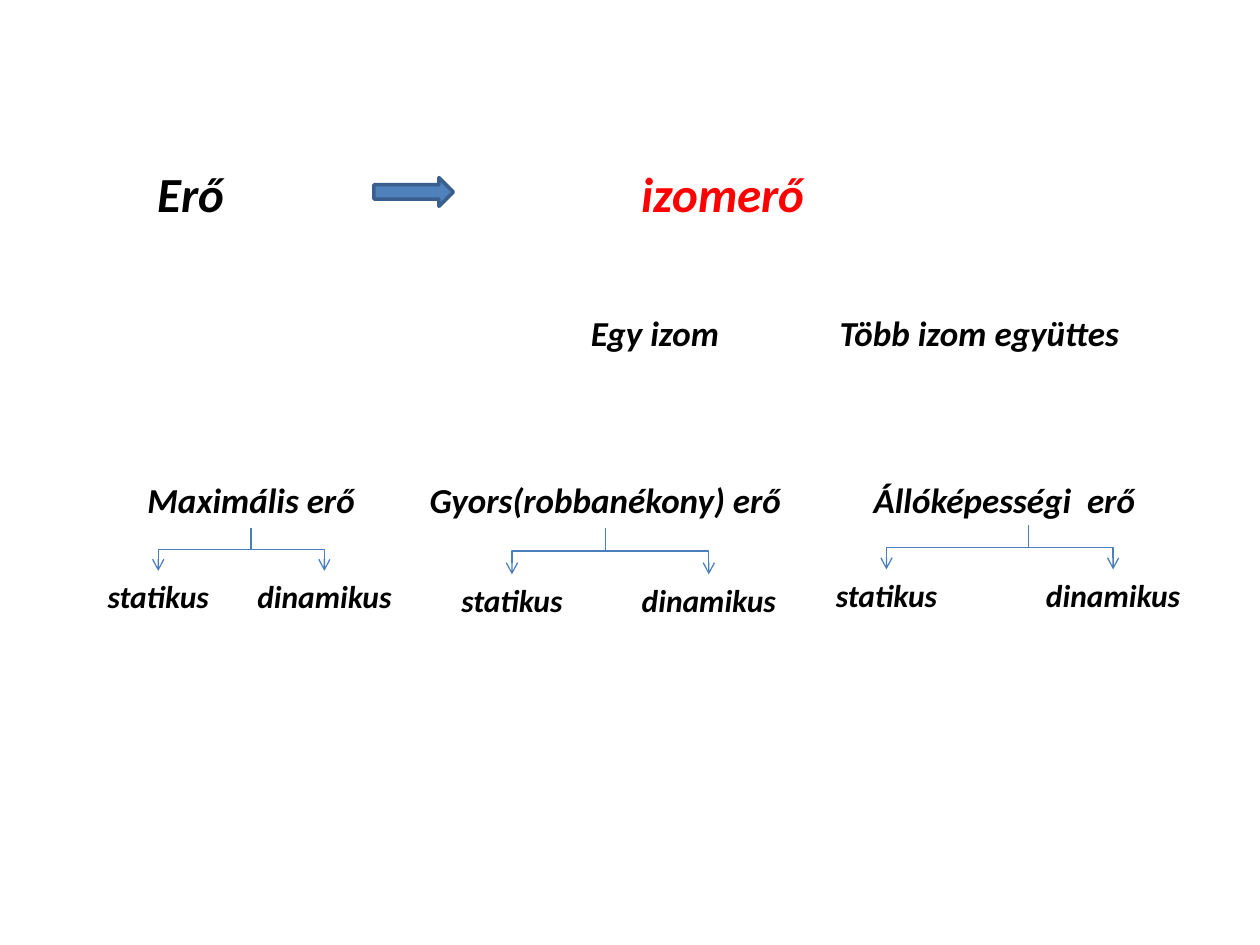
from dataclasses import dataclass

from lxml import etree
from pptx import Presentation
from pptx.dml.color import RGBColor
from pptx.enum.shapes import MSO_CONNECTOR, MSO_SHAPE
from pptx.enum.text import MSO_AUTO_SIZE, PP_ALIGN
from pptx.oxml.ns import qn
from pptx.util import Cm, Pt

ELBOW = MSO_CONNECTOR.ELBOW
RIGHT_ARROW = MSO_SHAPE.RIGHT_ARROW
CENTER = PP_ALIGN.CENTER
GROW = MSO_AUTO_SIZE.SHAPE_TO_FIT_TEXT
BLANK_LAYOUT = 6


@dataclass(frozen=True)
class Theme:
    font: str = "Calibri"
    text: RGBColor = RGBColor(0x00, 0x00, 0x00)
    accent: RGBColor = RGBColor(0xFF, 0x00, 0x00)
    arrow_fill: RGBColor = RGBColor(0x4F, 0x81, 0xBD)
    arrow_line: RGBColor = RGBColor(0x3A, 0x5F, 0x8C)
    connector: RGBColor = RGBColor(0x4B, 0x7E, 0xBC)
    main_size: int = 28
    heading_size: int = 20
    detail_size: int = 18


class SlideBuilder:
    """Draws styled elements on one slide; all lengths are centimetres."""

    def __init__(self, slide, theme):
        self.slide = slide
        self.theme = theme

    def label(self, text, left, top, width, height, size, color=None):
        box = self.slide.shapes.add_textbox(Cm(left), Cm(top), Cm(width), Cm(height))
        text_frame = box.text_frame
        text_frame.word_wrap = True
        text_frame.auto_size = GROW
        text_frame.text = text
        paragraph = text_frame.paragraphs[0]
        paragraph.alignment = CENTER
        font = paragraph.runs[0].font
        font.name = self.theme.font
        font.size = Pt(size)
        font.bold = font.italic = True
        font.color.rgb = color or self.theme.text

    def block_arrow(self, left, top, width, height):
        arrow = self.slide.shapes.add_shape(
            RIGHT_ARROW, Cm(left), Cm(top), Cm(width), Cm(height))
        arrow.shadow.inherit = False
        arrow.fill.solid()
        arrow.fill.fore_color.rgb = self.theme.arrow_fill
        arrow.line.color.rgb = self.theme.arrow_line
        arrow.line.width = Pt(2)

    def branch(self, start_x, start_y, end_x, end_y):
        """Elbow that leaves downwards: a turned box, mirrored when going right."""
        drop, span = end_y - start_y, abs(end_x - start_x)
        left = (start_x + end_x - drop) / 2
        top = (start_y + end_y - span) / 2
        begin_x, finish_x, turn = left, left + drop, 90
        if end_x > start_x:
            begin_x, finish_x, turn = finish_x, begin_x, 270
        connector = self.slide.shapes.add_connector(
            ELBOW, Cm(begin_x), Cm(top), Cm(finish_x), Cm(top + span))
        connector.line.color.rgb = self.theme.connector
        connector.line.width = Pt(0.75)
        properties = connector.element.spPr
        properties.find(qn("a:xfrm")).set("rot", str(turn * 60000))
        line = properties.find(qn("a:ln"))
        etree.SubElement(line, qn("a:tailEnd"), type="arrow")
        etree.SubElement(properties, qn("a:effectLst"))


# Heading, its left and width, branch start x and y, child top, child lefts
STRENGTH_TYPES = [
    ("Maximális erő", 2.18, 5.77, 5.06, 10.64, 11.51, (1.4, 4.75)),
    ("Gyors(robbanékony) erő", 8.33, 7.75, 12.2, 10.64, 11.58, (8.53, 12.5)),
    ("Állóképességi  erő", 16.87, 6.76, 20.73, 10.59, 11.48, (16.08, 20.65)),
]
MODES = ("statikus", "dinamikus")
MODE_WIDTH, MODE_HEIGHT = 3.58, 1.02
HEADING_HEIGHT = 1.12


def main():
    presentation = Presentation()
    presentation.slide_width = Cm(25.4)
    presentation.slide_height = Cm(19.05)
    theme = Theme()
    slide = presentation.slides.add_slide(presentation.slide_layouts[BLANK_LAYOUT])
    builder = SlideBuilder(slide, theme)

    # Strength leads to muscle strength
    builder.label("Erő ", 2.77, 3.18, 2.39, 1.45, theme.main_size)
    builder.block_arrow(7.54, 3.58, 1.6, 0.58)
    builder.label("izomerő ", 11.51, 3.18, 6.35, 1.45, theme.main_size, theme.accent)

    # One muscle or several
    builder.label("Egy izom", 10.92, 6.15, 4.57, HEADING_HEIGHT, theme.heading_size)
    builder.label("Több izom együttes", 16.28, 6.15, 6.93, HEADING_HEIGHT,
                  theme.heading_size)

    # Strength types, each split into static and dynamic
    for heading, left, width, stem_x, stem_y, mode_top, mode_lefts in STRENGTH_TYPES:
        builder.label(heading, left, 9.53, width, HEADING_HEIGHT, theme.heading_size)
        for mode, mode_left in zip(MODES, mode_lefts):
            builder.label(mode, mode_left, mode_top, MODE_WIDTH, MODE_HEIGHT,
                          theme.detail_size)
            builder.branch(stem_x, stem_y, mode_left + MODE_WIDTH / 2, mode_top)

    presentation.save("out.pptx")


if __name__ == "__main__":
    main()
